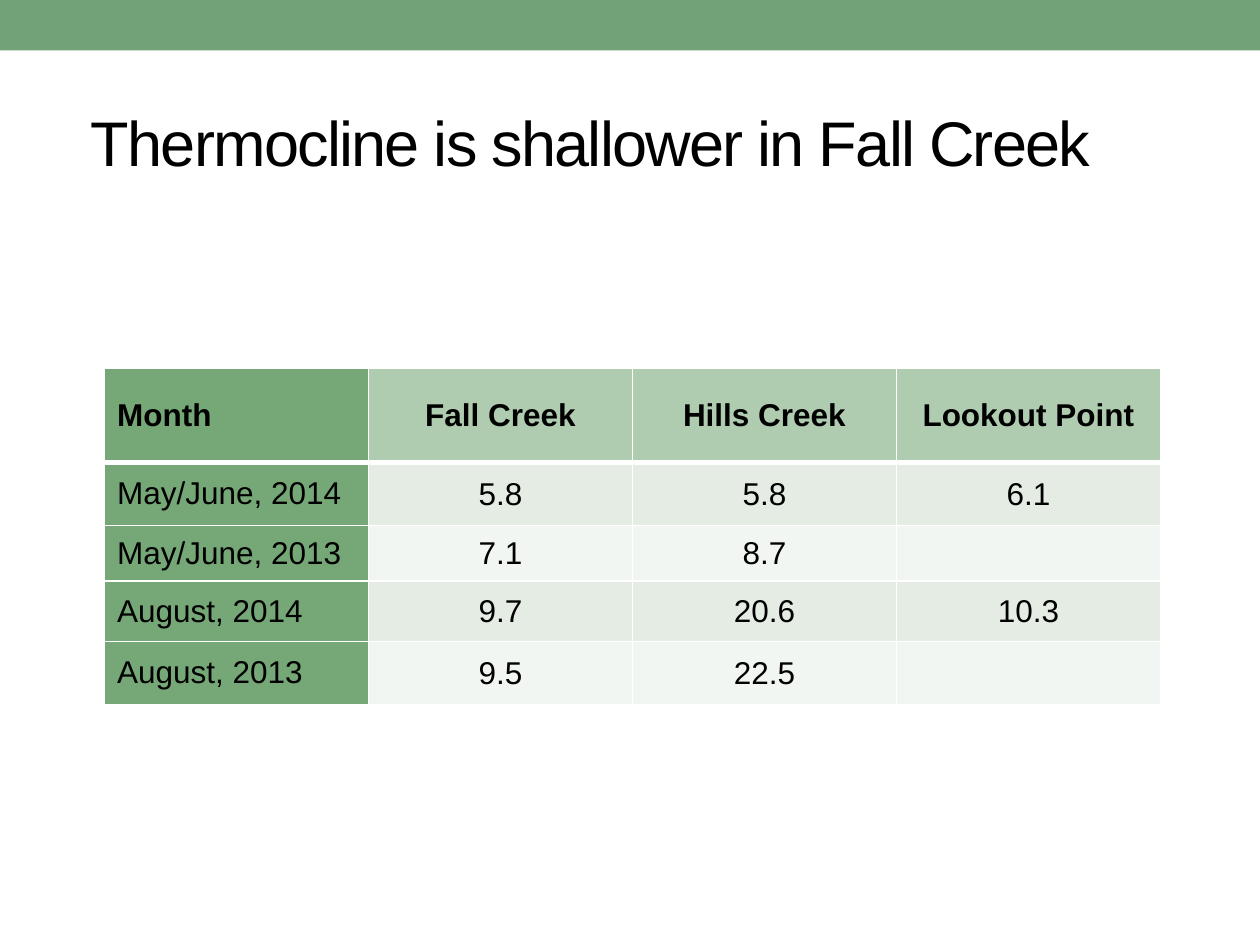
from dataclasses import dataclass

from lxml import etree
from pptx import Presentation, util as u
from pptx.dml.color import RGBColor
from pptx.enum import shapes, text
from pptx.oxml.ns import qn

# Content
TITLE = "Thermocline is shallower in Fall Creek"
ROWS = [
    ("Month", "Fall Creek", "Hills Creek", "Lookout Point"),
    ("May/June, 2014", "5.8", "5.8", "6.1"),
    ("May/June, 2013", "7.1", "8.7", ""),
    ("August, 2014", "9.7", "20.6", "10.3"),
    ("August, 2013", "9.5", "22.5", ""),
]
ROW_HEIGHTS = (0.75, 0.5, 0.44, 0.48, 0.5)


@dataclass(frozen=True)
class Theme:
    font: str = "Arial"
    title_size: int = 36
    table_size: int = 18
    ink: str = "000000"
    bar: str = "72A376"
    month: str = "76A776"
    header: str = "B0CCB0"
    bands: tuple = ("E4ECE4", "F2F6F2")
    border: str = "FFFFFF"


THEME = Theme()
WIDTH, HEIGHT = 10, 7.5
TABLE_LEFT, TABLE_TOP, TABLE_WIDTH = 0.83, 2.92, 8.38


def paint(fill, color):
    fill.solid()
    fill.fore_color.rgb = RGBColor.from_string(color)


def write(frame, words, size, bold=False, align=text.PP_ALIGN.LEFT, spacing=None):
    paragraph = frame.paragraphs[0]
    paragraph.alignment = align
    run = paragraph.add_run()
    run.text = words
    font = run.font
    font.name, font.size, font.bold = THEME.font, u.Pt(size), bold
    font.color.rgb = RGBColor.from_string(THEME.ink)
    if spacing is not None:
        run._r.get_or_add_rPr().set("spc", str(int(spacing * 100)))


def add_borders(cell, **widths):
    properties = cell._tc.get_or_add_tcPr()
    for side in "LRTB":
        line = etree.SubElement(properties, qn(f"a:ln{side}"),
                                w=str(u.Pt(widths.get(side, 1))))
        fill = etree.SubElement(line, qn("a:solidFill"))
        etree.SubElement(fill, qn("a:srgbClr"), val=THEME.border)


def add_bar(slide):
    bar = slide.shapes.add_shape(shapes.MSO_SHAPE.RECTANGLE, 0, 0,
                                 u.Inches(WIDTH), u.Inches(0.4))
    bar.shadow.inherit = False
    paint(bar.fill, THEME.bar)
    bar.line.fill.background()


def add_title(slide):
    title = slide.shapes.title
    title.left, title.top = u.Inches(WIDTH * 0.05), u.Inches(0.58)
    title.width, title.height = u.Inches(WIDTH * 0.9), u.Inches(1.08)
    frame = title.text_frame
    frame.word_wrap = True
    frame.auto_size = text.MSO_AUTO_SIZE.NONE
    frame.vertical_anchor = text.MSO_ANCHOR.MIDDLE
    frame.margin_left = u.Inches(0.22)
    write(frame, TITLE, THEME.title_size, spacing=-1)


def add_depth_table(slide):
    table = slide.shapes.add_table(
        len(ROWS), len(ROWS[0]), u.Inches(TABLE_LEFT), u.Inches(TABLE_TOP),
        u.Inches(TABLE_WIDTH), u.Inches(sum(ROW_HEIGHTS))).table
    for row, height in zip(table.rows, ROW_HEIGHTS):
        row.height = u.Inches(height)

    for r, values in enumerate(ROWS):
        for c, value in enumerate(values):
            cell = table.cell(r, c)
            is_header, is_month = r == 0, c == 0
            # The rule under the header is thicker than the others
            add_borders(cell, B=3 if is_header else 1, T=3 if r == 1 else 1)
            band = THEME.header if is_header else THEME.bands[(r - 1) % 2]
            paint(cell.fill, THEME.month if is_month else band)
            cell.vertical_anchor = text.MSO_ANCHOR.MIDDLE
            if not value:
                continue
            if not is_header and not is_month:
                cell.margin_left = cell.margin_right = cell.margin_top = u.Inches(0.01)
                cell.margin_bottom = 0
            write(cell.text_frame, value, THEME.table_size, bold=is_header,
                  align=text.PP_ALIGN.LEFT if is_month else text.PP_ALIGN.CENTER)


def main():
    presentation = Presentation()
    presentation.slide_width = u.Inches(WIDTH)
    presentation.slide_height = u.Inches(HEIGHT)
    slide = presentation.slides.add_slide(presentation.slide_layouts[5])
    add_bar(slide)
    add_title(slide)
    add_depth_table(slide)
    presentation.save("out.pptx")


if __name__ == "__main__":
    main()
